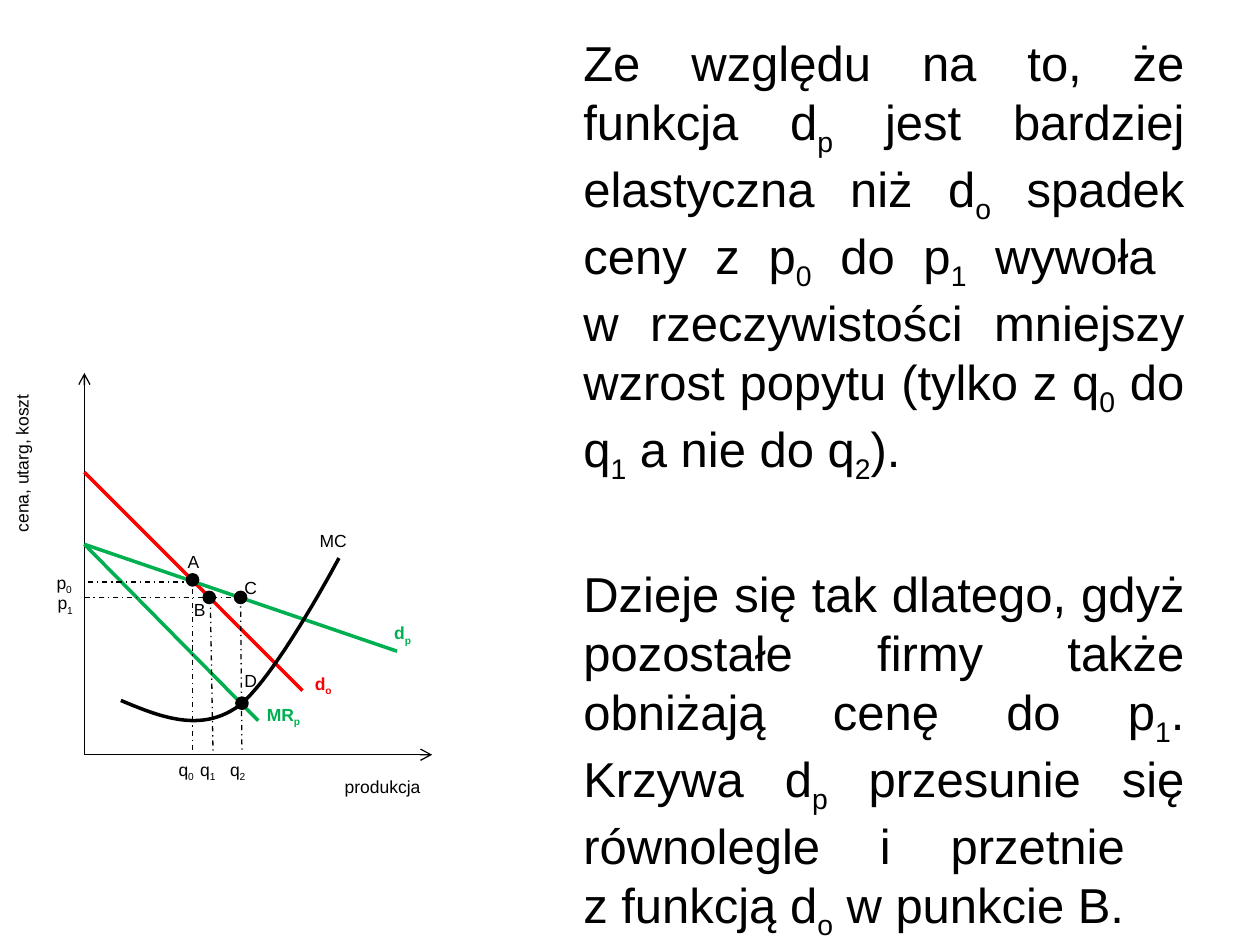
import pptx
import pptx.util
import pptx.dml.color
import pptx.enum.dml
import pptx.enum.shapes
import pptx.enum.text
import pptx.oxml.ns
from dataclasses import dataclass
from lxml import etree

Inches = pptx.util.Inches
Pt = pptx.util.Pt
BLACK = pptx.dml.color.RGBColor(0x00, 0x00, 0x00)
RED = pptx.dml.color.RGBColor(0xFF, 0x00, 0x00)
GREEN = pptx.dml.color.RGBColor(0x00, 0xB0, 0x50)
DASH_DOT = pptx.enum.dml.MSO_LINE.DASH_DOT
FONT = "Arial"
SLIDE_W, SLIDE_H = 10, 7.5
THIN, THICK = 0.75, 2
DOT = 0.08
LABEL_ROWS = 8.9

EXPLANATION = [
    "Ze względu na to, że funkcja d|p| jest bardziej elastyczna niż d|o| spadek "
    "ceny z p|0| do p|1| wywoła \nw rzeczywistości mniejszy wzrost popytu "
    "(tylko z q|0| do q|1| a nie do q|2|).",
    "Dzieje się tak dlatego, gdyż pozostałe firmy także obniżają cenę do p|1|. "
    "Krzywa d|p| przesunie się równolegle i przetnie \nz funkcją d|o| w punkcie B.",
]


@dataclass
class Plot:
    left: float
    top: float
    width: float
    height: float

    def x(self, column):
        return Inches(self.left + self.width * column / 100)

    def y(self, row):
        return Inches(self.top + self.height * (100 - row) / 100)


def add_sub(parent, tag, **attributes):
    return etree.SubElement(parent, pptx.oxml.ns.qn(tag), **attributes)


def write_indexed(paragraph, text):
    for part, piece in enumerate(text.split("|")):
        for row, words in enumerate(piece.split("\n")):
            if row:
                paragraph.add_line_break()
            if words:
                run = paragraph.add_run()
                run.text = words
                if part % 2:
                    run.font._element.set("baseline", "-25000")


def style_font(paragraph, size, color, bold=False):
    paragraph.font.name = FONT
    paragraph.font.size = Pt(size)
    paragraph.font.color.rgb = color
    paragraph.font.bold = bold


def add_explanation(body, left, top, width, height):
    body.left, body.top = Inches(left), Inches(top)
    body.width, body.height = Inches(width), Inches(height)
    frame = body.text_frame
    frame.word_wrap = True
    frame.auto_size = pptx.enum.text.MSO_AUTO_SIZE.NONE
    for order, text in enumerate(EXPLANATION):
        paragraph = frame.add_paragraph() if order else frame.paragraphs[0]
        write_indexed(paragraph, text)
        properties = paragraph._p.get_or_add_pPr()
        properties.set("marL", "0")
        properties.set("indent", "0")
        add_sub(properties, "a:buNone")
        paragraph.alignment = pptx.enum.text.PP_ALIGN.JUSTIFY
        paragraph.space_before = Pt(45 if order else 0)
        style_font(paragraph, 28, BLACK)


def add_line(slide, plot, start, end, color=BLACK, weight=THIN, dash=None, arrow=False):
    line = slide.shapes.add_connector(
        pptx.enum.shapes.MSO_CONNECTOR.STRAIGHT,
        plot.x(start[0]), plot.y(start[1]), plot.x(end[0]), plot.y(end[1]))
    line.line.color.rgb = color
    line.line.width = Pt(weight)
    if dash:
        line.line.dash_style = dash
    if arrow:
        add_sub(line.line._get_or_add_ln(), "a:tailEnd", type="arrow")
    add_sub(line._element.spPr, "a:effectLst")


def add_point(slide, plot, column, row):
    point = slide.shapes.add_shape(
        pptx.enum.shapes.MSO_SHAPE.OVAL,
        plot.x(column) - Inches(DOT / 2), plot.y(row) - Inches(DOT / 2),
        Inches(DOT), Inches(DOT))
    point.shadow.inherit = False
    point.fill.solid()
    point.fill.fore_color.rgb = BLACK
    point.line.color.rgb = BLACK
    point.line.width = Pt(THICK)


def add_label(slide, plot, text, column, row, columns=13, color=BLACK, bold=False, turn=0):
    label = slide.shapes.add_textbox(
        plot.x(column), plot.y(row),
        Inches(plot.width * columns / 100), Inches(plot.height * LABEL_ROWS / 100))
    label.rotation = turn
    label.text_frame.word_wrap = True
    paragraph = label.text_frame.paragraphs[0]
    write_indexed(paragraph, text)
    style_font(paragraph, 10, color, bold)


def bezier(start, first, second, end, t):
    u = 1 - t
    return tuple(u**3 * a + 3 * u * u * t * b + 3 * u * t * t * c + t**3 * d
                 for a, b, c, d in zip(start, first, second, end))


def add_marginal_cost(slide, plot):
    start, valley, top = (10.5, 14.2), (43.5, 12.2), (73.2, 51.5)
    arcs = [(start, (21.7, 9.9), (33, 5.9), valley),
            (valley, (54, 18.5), top, top)]
    steps = 24
    places = [bezier(*arc, step / steps) for arc in arcs for step in range(1, steps + 1)]
    builder = slide.shapes.build_freeform(plot.x(start[0]), plot.y(start[1]))
    builder.add_line_segments([(plot.x(c), plot.y(r)) for c, r in places], close=False)
    curve = builder.convert_to_shape()
    curve.shadow.inherit = False
    curve.fill.background()
    curve.line.color.rgb = BLACK
    curve.line.width = Pt(THICK)


def add_demand_plot(slide, plot):
    for end in [(0, 100), (100, 0)]:
        add_line(slide, plot, (0, 0), end, arrow=True)
    for start, end, color in [
        ((0, 74), (62.7, 16.8), RED),
        ((0, 55.1), (89.9, 27.1), GREEN),
        ((0, 55.1), (50, 8.9), GREEN),
    ]:
        add_line(slide, plot, start, end, color, THICK)
    for start, end in [
        ((31.1, 47.2), (31.1, 0)),
        ((31.1, 45.2), (0, 45.2)),
        ((0, 41.2), (44.9, 41.2)),
        ((36.2, 40.9), (37, 0.3)),
        ((44.9, 41.2), (45.3, 0.7)),
    ]:
        add_line(slide, plot, start, end, dash=DASH_DOT)
    add_marginal_cost(slide, plot)
    for column, row in [(31.1, 45.8), (35.9, 41.2), (44.9, 41.2), (45.3, 13.5)]:
        add_point(slide, plot, column, row)
    for text, column, row in [
        ("q|0|", 23.5, 0.5), ("q|1|", 29.7, 0.5), ("q|2|", 38.3, 0.5),
        ("p|0|", -11.6, 49.5), ("p|1|", -11.3, 44.2),
        ("A", 26.1, 55.1), ("B", 27.9, 42.3), ("C", 42.4, 48.2), ("D", 42.4, 23.8),
    ]:
        add_label(slide, plot, text, column, row)
    for text, column, row, columns, color in [
        ("d|p|", 85.5, 36.3, 14.1, GREEN),
        ("d|o|", 62.7, 23.1, 14.1, RED),
        ("MR|p|", 48.9, 14.9, 21, GREEN),
    ]:
        add_label(slide, plot, text, column, row, columns, color, bold=True)
    add_label(slide, plot, "MC", 64.1, 60.4, 21.4)
    add_label(slide, plot, "produkcja", 71.3, -4, 37)
    add_label(slide, plot, "cena, utarg, koszt", -50, 88.7, 64.1, turn=270)


def main():
    deck = pptx.Presentation()
    deck.slide_width, deck.slide_height = Inches(SLIDE_W), Inches(SLIDE_H)
    slide = deck.slides.add_slide(deck.slide_layouts[1])
    title = slide.shapes.title._element
    title.getparent().remove(title)
    add_explanation(slide.placeholders[1], 4.53, 0.21, 4.97, 6.93)
    add_demand_plot(slide, Plot(0.67, 2.96, 2.76, 3.03))
    deck.save("out.pptx")


if __name__ == "__main__":
    main()
